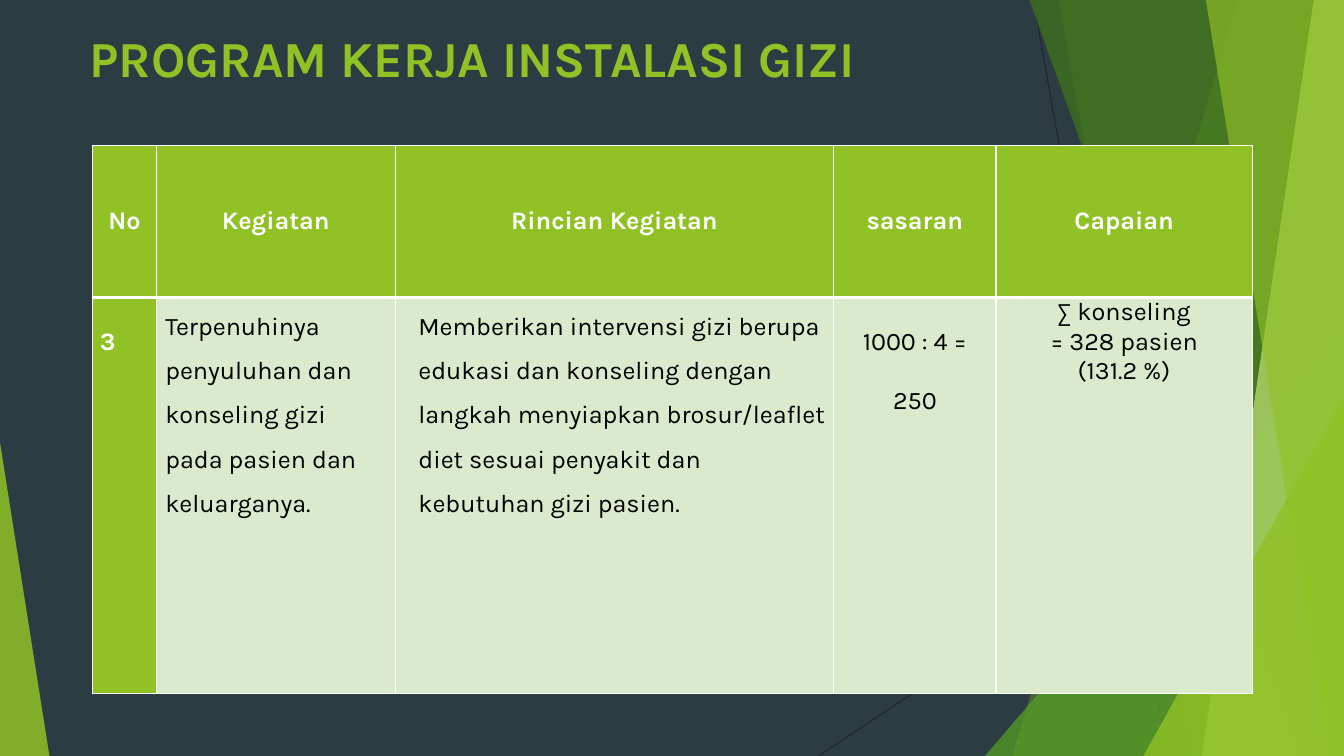
from lxml import etree
from pptx import Presentation
from pptx import util as u
from pptx.dml.color import RGBColor
from pptx.enum import shapes, text
from pptx.oxml.ns import qn

DARK = RGBColor(0x2C, 0x3C, 0x43)
LINE = RGBColor(0x26, 0x26, 0x26)
GREEN = RGBColor(0x90, 0xC2, 0x26)
MID = RGBColor(0x54, 0xA0, 0x21)
DEEP = RGBColor(0x3F, 0x78, 0x19)
LIME = RGBColor(0xC0, 0xE4, 0x74)
PALE = RGBColor(0xDB, 0xE9, 0xCD)
WHITE = RGBColor(0xFF, 0xFF, 0xFF)
BLACK = RGBColor(0, 0, 0)
FONT = "Karla"
W, H = 13.33, 7.5

prs = Presentation()
prs.slide_width, prs.slide_height = u.Inches(W), u.Inches(H)
s = prs.slides.add_slide(prs.slide_layouts[5])
s.background.fill.solid()
s.background.fill.fore_color.rgb = DARK


def paint(sp, color, opacity):
    """Flat fill with an opacity in percent, no outline or shadow."""
    sp.shadow.inherit = False
    sp.line.fill.background()
    sp.fill.solid()
    sp.fill.fore_color.rgb = color
    clr = sp.fill._xPr.find(qn("a:solidFill"))[0]
    etree.SubElement(clr, qn("a:alpha")).set("val", str(opacity * 1000))


def write(p, words, size, color, bold):
    r = p.add_run()
    r.text = words
    for name, value in dict(name=FONT, size=u.Pt(size), bold=bold).items():
        setattr(r.font, name, value)
    r.font.color.rgb = color


# Thin lines behind the facets
for ends in [(10.25, 0, 11.58, H), (W, 4.03, 8.12, H)]:
    c = s.shapes.add_connector(shapes.MSO_CONNECTOR.STRAIGHT,
                               *[u.Inches(v) for v in ends])
    c.line.color.rgb, c.line.width = LINE, u.Pt(0.75)
    etree.SubElement(c._element.spPr, qn("a:effectLst"))

# Facets: a band has its left edge at (top x, bottom x) and runs to the right
# side; a triangle has (left, top, width, apex) and stands on the bottom
facets = [
    ((12.28, 10.04), GREEN, 30),
    ((10.5, 11.83), GREEN, 20),
    ((9.77, 3.33, 3.56, 1), MID, 72),
    ((10.21, 12.91), DEEP, 70),
    ((13.03, 11.92), LIME, 70),
    ((11.96, 13.18), GREEN, 65),
    ((11.34, 3.93, 1.99, 1), GREEN, 80),
    ((0, 4.39, 0.49, 0), GREEN, 85),
]
for place, color, opacity in facets:
    if len(place) == 2:
        top, bottom = place
        pts = [(u.Inches(x), u.Inches(y))
               for x, y in [(top, 0), (W, 0), (W, H), (bottom, H)]]
        fb = s.shapes.build_freeform(*pts[0])
        fb.add_line_segments(pts[1:])
        sp = fb.convert_to_shape()
    else:
        x, y, width, apex = place
        sp = s.shapes.add_shape(shapes.MSO_SHAPE.ISOSCELES_TRIANGLE,
                                *[u.Inches(v) for v in (x, y, width, H - y)])
        sp.adjustments[0] = apex
    paint(sp, color, opacity)

# Title, in front of the facets
title = s.shapes.title
s.shapes._spTree.append(title._element)
for name, value in dict(left=0.79, top=0.22, width=9.4, height=1.44).items():
    setattr(title, name, u.Inches(value))
tf = title.text_frame
tf.word_wrap = True
tf.vertical_anchor = text.MSO_ANCHOR.TOP
tf.paragraphs[0].alignment = text.PP_ALIGN.LEFT
write(tf.paragraphs[0], "PROGRAM KERJA INSTALASI GIZI", 36, GREEN, True)

# Table
CENTER, LEFT, JUSTIFY = (text.PP_ALIGN.CENTER, text.PP_ALIGN.LEFT,
                         text.PP_ALIGN.JUSTIFY)
cols = [0.63, 2.37, 4.35, 1.61, 2.54]
rows = [1.51, 3.93]
heads = ["No", "Kegiatan", "Rincian Kegiatan", "sasaran", "Capaian"]
# Body cells: paragraphs, alignment, line spacing, left indent
body = [
    (["3"], JUSTIFY, 2.0, 0),
    (["Terpenuhinya penyuluhan dan konseling gizi pada pasien dan "
      "keluarganya."], LEFT, 1.5, 0.02),
    (["Memberikan intervensi gizi berupa edukasi dan konseling dengan "
      "langkah menyiapkan brosur/leaflet diet sesuai penyakit dan "
      "kebutuhan gizi pasien."], LEFT, 1.5, 0.16),
    (["1000 : 4 =", "250"], CENTER, 2.0, 0),
    (["∑ konseling", "= 328 pasien", "(131.2 %)"], CENTER, 1.0, 0),
]
grid = [[([h], CENTER, 1.0, 0) for h in heads], body]

tbl = s.shapes.add_table(len(rows), len(cols), u.Inches(0.92), u.Inches(1.44),
                         u.Inches(sum(cols)), u.Inches(sum(rows))).table
for col, width in zip(tbl.columns, cols):
    col.width = u.Inches(width)
for row, height in zip(tbl.rows, rows):
    row.height = u.Inches(height)

for i, line in enumerate(grid):
    head = i == 0
    for j, (paras, align, spacing, indent) in enumerate(line):
        cell = tbl.cell(i, j)
        side = u.Inches(0.03 if head else 0.07)
        anchor = text.MSO_ANCHOR.MIDDLE if head else text.MSO_ANCHOR.TOP
        for name, value in dict(margin_left=side, margin_right=side,
                                margin_top=0, margin_bottom=0,
                                vertical_anchor=anchor).items():
            setattr(cell, name, value)

        # White borders, heavier between the header and the body
        tcPr = cell._tc.get_or_add_tcPr()
        heavy = "lnB" if head else "lnT"
        for edge in ("lnL", "lnR", "lnT", "lnB"):
            ln = etree.SubElement(tcPr, qn("a:" + edge))
            ln.set("w", str(u.Pt(3 if edge == heavy else 1)))
            fill = etree.SubElement(ln, qn("a:solidFill"))
            etree.SubElement(fill, qn("a:srgbClr")).set("val", str(WHITE))

        strong = head or j == 0
        cell.fill.solid()
        cell.fill.fore_color.rgb = GREEN if strong else PALE

        tf = cell.text_frame
        for k, words in enumerate(paras):
            p = tf.add_paragraph() if k else tf.paragraphs[0]
            p.alignment, p.line_spacing = align, spacing
            if head:
                p.space_before = u.Pt(6)
            if indent:
                p._p.get_or_add_pPr().set("marL", str(u.Inches(indent)))
            write(p, words, 18, WHITE if strong else BLACK, strong)

prs.save("out.pptx")
